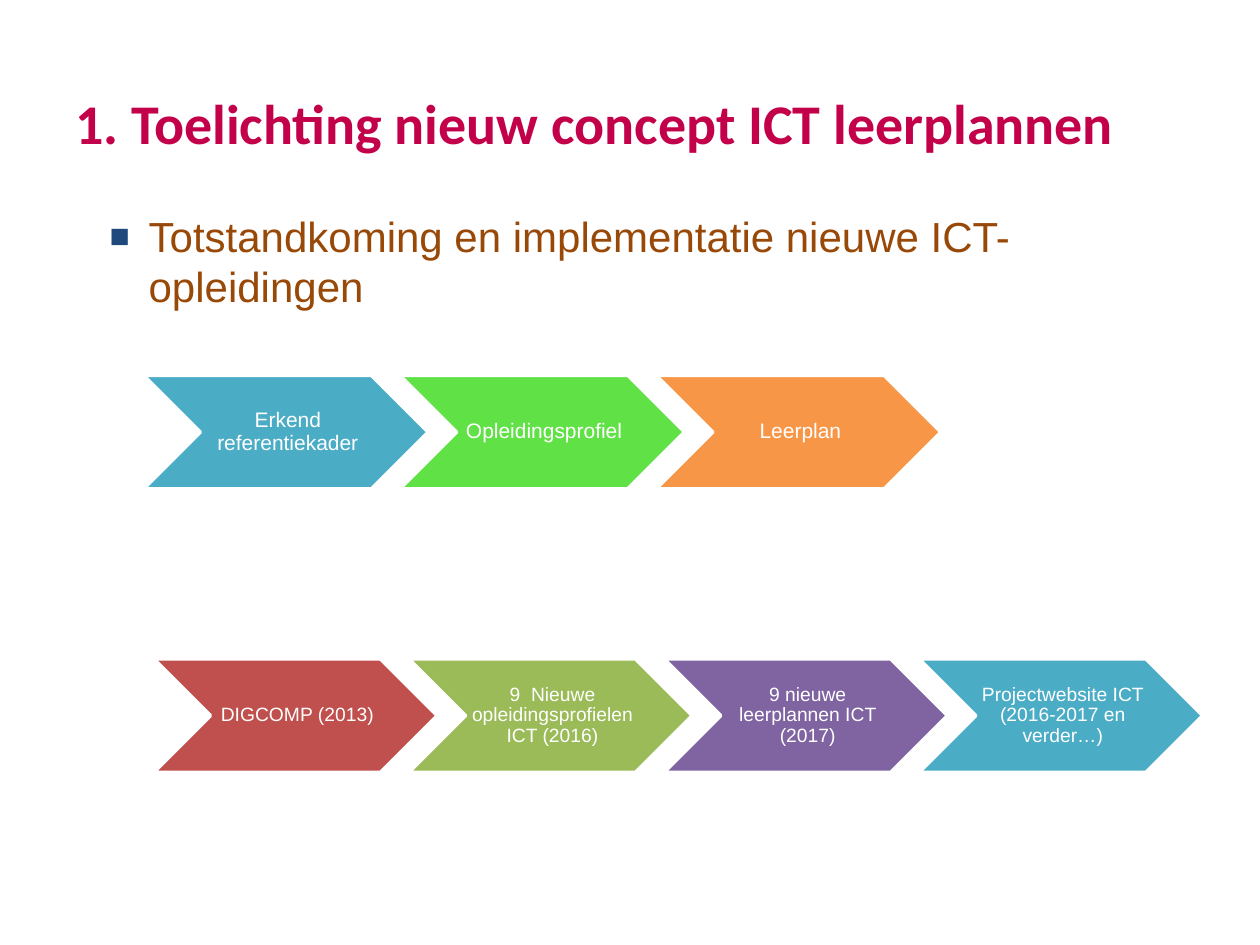
from lxml.etree import SubElement
from pptx import Presentation
from pptx.dml.color import RGBColor
from pptx.enum.shapes import MSO_SHAPE
from pptx.enum.text import MSO_ANCHOR, PP_ALIGN
from pptx.oxml.ns import qn
from pptx.util import Inches, Pt

WHITE = RGBColor(0xFF, 0xFF, 0xFF)
CRIMSON = RGBColor(0xC3, 0x00, 0x4A)
BROWN = RGBColor(0x98, 0x48, 0x07)
NAVY = RGBColor(0x1F, 0x49, 0x7D)
TEAL = RGBColor(0x4B, 0xAC, 0xC6)
GREEN = RGBColor(0x60, 0xE1, 0x46)
ORANGE = RGBColor(0xF7, 0x96, 0x46)
RED = RGBColor(0xC0, 0x50, 0x4D)
OLIVE = RGBColor(0x9B, 0xBB, 0x59)
PURPLE = RGBColor(0x80, 0x64, 0xA2)

TITLE = "1. Toelichting nieuw concept ICT leerplannen"
SUBJECT = "Totstandkoming en implementatie nieuwe ICT-opleidingen"
PROCESSES = [
    {"left": 1.14, "top": 2.98, "width": 2.26, "size": 12, "steps": [
        ("Erkend referentiekader", TEAL),
        ("Opleidingsprofiel", GREEN),
        ("Leerplan", ORANGE),
    ]},
    {"left": 1.22, "top": 5.23, "width": 2.25, "size": 11, "steps": [
        ("DIGCOMP (2013)", RED),
        ("9  Nieuwe opleidingsprofielen ICT (2016)", OLIVE),
        ("9 nieuwe leerplannen ICT (2017)", PURPLE),
        ("Projectwebsite ICT (2016-2017 en verder…)", TEAL),
    ]},
]
CHEVRON_HEIGHT = 0.9
STEP_PITCH = 0.9  # share of the chevron width


def write_text(shape, text, font_name, size, color, margins, bold=False):
    frame = shape.text_frame
    frame.word_wrap = True
    (frame.margin_left, frame.margin_top,
     frame.margin_right, frame.margin_bottom) = map(Inches, margins)
    frame.text = text
    paragraph = frame.paragraphs[0]
    font = paragraph.runs[0].font
    font.name, font.size, font.bold = font_name, Pt(size), bold
    font.color.rgb = color
    return paragraph


def add_square_bullet(paragraph, indent):
    properties = paragraph._p.get_or_add_pPr()
    properties.set("marL", str(Inches(indent)))
    properties.set("indent", str(-Inches(indent)))
    color = SubElement(properties, qn("a:buClr"))
    SubElement(color, qn("a:srgbClr"), val=str(NAVY))
    SubElement(properties, qn("a:buSzPct"), val="80000")
    SubElement(properties, qn("a:buFont"), typeface="Arial")
    SubElement(properties, qn("a:buChar"), char="■")


def add_process(slide, process):
    width = process["width"]
    for index, (label, color) in enumerate(process["steps"]):
        left = process["left"] + index * width * STEP_PITCH
        chevron = slide.shapes.add_shape(
            MSO_SHAPE.CHEVRON, Inches(left), Inches(process["top"]),
            Inches(width), Inches(CHEVRON_HEIGHT))
        chevron.shadow.inherit = False
        chevron.fill.solid()
        chevron.fill.fore_color.rgb = color
        chevron.line.color.rgb = WHITE
        chevron.line.width = Pt(2)
        paragraph = write_text(chevron, label, "Arial", process["size"], WHITE,
                               (0.04, 0.02, 0.01, 0.02))
        paragraph.alignment = PP_ALIGN.CENTER
        paragraph.line_spacing = 0.9
        chevron.text_frame.vertical_anchor = MSO_ANCHOR.MIDDLE


def main():
    presentation = Presentation()
    presentation.slide_width, presentation.slide_height = Inches(10), Inches(7.5)
    slide = presentation.slides.add_slide(presentation.slide_layouts[6])

    title = slide.shapes.add_textbox(
        Inches(0.5), Inches(0.29), Inches(9.06), Inches(1.35))
    write_text(title, TITLE, "Calibri", 32, CRIMSON, (0.1, 0.05, 0.1, 0.05), bold=True)
    title.text_frame.vertical_anchor = MSO_ANCHOR.MIDDLE

    body = slide.shapes.add_textbox(
        Inches(0.87), Inches(1.62), Inches(8.68), Inches(4.38))
    subject = write_text(body, SUBJECT, "Arial", 24, BROWN, (0, 0.05, 0, 0.05))
    subject.space_before = Pt(4.8)
    add_square_bullet(subject, 0.31)

    for process in PROCESSES:
        add_process(slide, process)
    presentation.save("out.pptx")


if __name__ == "__main__":
    main()
